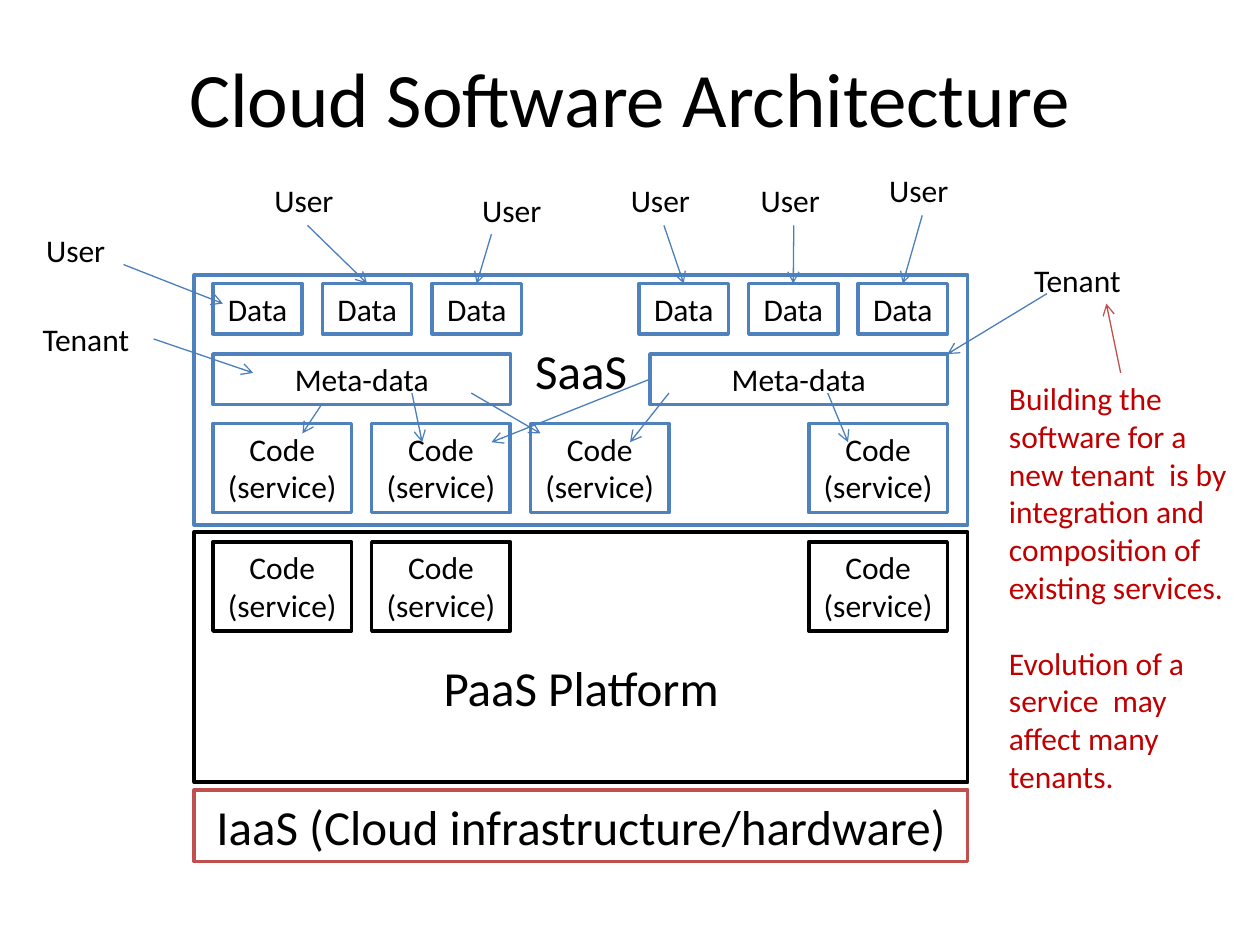
import pptx
import pptx.dml.color
import pptx.enum.shapes
import pptx.enum.text
import pptx.oxml
import pptx.oxml.ns
import pptx.util
from pptx.util import Pt

RGBColor = pptx.dml.color.RGBColor
BLACK = RGBColor(0x00, 0x00, 0x00)
WHITE = RGBColor(0xFF, 0xFF, 0xFF)
BLUE = RGBColor(0x4F, 0x81, 0xBD)
ARROW_BLUE = RGBColor(0x4B, 0x7E, 0xBC)
RED = RGBColor(0xC0, 0x50, 0x4D)
NOTE_RED = RGBColor(0xC0, 0x00, 0x00)

FONT = "Calibri"
TOP, LEFT, BOTTOM, RIGHT = range(4)  # connection sites of a rectangle
CENTER = pptx.enum.text.PP_ALIGN.CENTER

LAYER_X, LAYER_W, LAYER_H = 111, 442, 143
INNER_X, RIGHT_EDGE = 121.7, 541.4
CODE_W, CODE_H, CODE_STEP = 79.2, 51, 90.7
DATA_W, DATA_STEP = 51, 62.6
META_W = 170
ROW_H = 28.8
LABEL_W = 73.4


def write(frame, paragraphs, size, color=BLACK, align=CENTER):
    frame.word_wrap = True
    frame.text = "\n".join(paragraphs)
    for paragraph in frame.paragraphs:
        paragraph.alignment = align
        for run in paragraph.runs:
            run.font.name = FONT
            run.font.size = Pt(size)
            run.font.color.rgb = color


def add_box(slide, text, x, y, w, h, outline=BLUE, size=18, text_top=3.6):
    box = slide.shapes.add_shape(
        pptx.enum.shapes.MSO_SHAPE.RECTANGLE, Pt(x), Pt(y), Pt(w), Pt(h))
    box.shadow.inherit = False
    box.fill.solid()
    box.fill.fore_color.rgb = WHITE
    box.line.color.rgb = outline
    box.line.width = Pt(2)
    write(box.text_frame, [text], size)
    box.text_frame.vertical_anchor = pptx.enum.text.MSO_ANCHOR.TOP
    box.text_frame.margin_top = Pt(text_top)
    return box


def add_text(slide, paragraphs, x, y, w, h, size=18, color=BLACK, align=CENTER):
    text = slide.shapes.add_textbox(Pt(x), Pt(y), Pt(w), Pt(h))
    write(text.text_frame, paragraphs, size, color, align)
    return text


def add_label(slide, text, x, y):
    return add_text(slide, [text], x, y, LABEL_W, ROW_H)


def add_code(slide, x, y, outline=BLUE):
    return add_box(slide, "Code (service) ", x, y, CODE_W, CODE_H, outline)


def add_arrow(slide, start, end, color=ARROW_BLUE):
    """Each end is a point (x, y) or a joint (shape, site)."""
    joined = [not isinstance(place[0], (int, float)) for place in (start, end)]
    x1, y1 = (0, 0) if joined[0] else start
    x2, y2 = (0, 0) if joined[1] else end
    arrow = slide.shapes.add_connector(
        pptx.enum.shapes.MSO_CONNECTOR.STRAIGHT, Pt(x1), Pt(y1), Pt(x2), Pt(y2))
    if joined[0]:
        arrow.begin_connect(*start)
    if joined[1]:
        arrow.end_connect(*end)
    arrow.line.color.rgb = color
    arrow.line.width = Pt(0.75)
    qn = pptx.oxml.ns.qn
    tail = arrow.line._get_or_add_ln().makeelement(qn("a:tailEnd"), {"type": "arrow"})
    arrow.line._get_or_add_ln().append(tail)
    properties = arrow._element.spPr
    properties.append(properties.makeelement(qn("a:effectLst"), {}))


def add_layers(slide):
    add_box(slide, "PaaS Platform", LAYER_X, 304, LAYER_W, LAYER_H, BLACK, 28, 72)
    add_box(slide, "IaaS (Cloud infrastructure/hardware)",
            LAYER_X, 451.4, LAYER_W, 41, RED, 28)
    add_box(slide, "SaaS", LAYER_X, 157, LAYER_W, LAYER_H, BLUE, 28, 37.8)


def add_services(slide):
    last_x = RIGHT_EDGE - CODE_W
    for y, outline, count in ((242, BLUE, 3), (309.6, BLACK, 2)):
        for x in [INNER_X + i * CODE_STEP for i in range(count)] + [last_x]:
            add_code(slide, x, y, outline)


def add_data(slide):
    right_x = RIGHT_EDGE - DATA_W - 2 * DATA_STEP
    return [add_box(slide, "Data", x + i * DATA_STEP, 162, DATA_W, ROW_H)
            for x in (INNER_X, right_x) for i in range(3)]


def add_users(slide, data):
    places = [(8.6, 128.2), (139, 100), (257.8, 105.8),
              (342.7, 100), (416.9, 100), (490.3, 94.3)]
    users = [add_label(slide, "User ", x, y) for x, y in places]
    add_arrow(slide, (70.6, 151.2), (127.4, 173.5))
    add_arrow(slide, (280.8, 133.9), (data[2], TOP))
    for i in (1, 3, 4, 5):
        add_arrow(slide, (users[i], BOTTOM), (data[i], TOP))


def add_tenants(slide):
    left_tenant = add_label(slide, "Tenant ", 14.4, 179.3)
    add_label(slide, "Tenant ", 581, 145.4)
    add_arrow(slide, (left_tenant, RIGHT), (144.7, 213.1))
    add_arrow(slide, (598.3, 167.8), (RIGHT_EDGE, 202.3))


def add_metadata(slide):
    left_x, right_x = INNER_X, RIGHT_EDGE - META_W
    _, right_meta = [add_box(slide, "Meta-data", x, 202.3, META_W, ROW_H)
                     for x in (left_x, right_x)]
    # Links from the meta-data to the services
    for start, end in (
            ((184.3, 230.4), (172.8, 247.7)),
            ((235.4, 224.6), (241.2, 252.7)),
            ((269.3, 224.6), (308.9, 247.7)),
            ((382.3, 224.6), (360, 252.7)),
            ((473, 224.6), (484.6, 252.7)),
            ((right_meta, LEFT), (280.8, 252.7))):
        add_arrow(slide, start, end)


def add_note(slide):
    note = add_text(
        slide,
        ["Building the software for a new tenant  is by integration and "
         "composition of existing services.",
         "Evolution of a service  may affect many tenants."],
        569.5, 213.1, 141.8, 247, color=NOTE_RED,
        align=pptx.enum.text.PP_ALIGN.LEFT)
    note.text_frame.paragraphs[1].space_before = Pt(21.6)
    add_arrow(slide, (note, TOP), (632.2, 173.5), RED)


def main():
    deck = pptx.Presentation()
    deck.slide_width, deck.slide_height = Pt(720), Pt(540)
    slide = deck.slides.add_slide(deck.slide_layouts[6])

    # Title
    title = add_text(slide, ["Cloud Software Architecture"], 20, 21.6, 680, 67, 44)
    title.text_frame.vertical_anchor = pptx.enum.text.MSO_ANCHOR.MIDDLE

    # Layers and what they hold
    add_layers(slide)
    add_services(slide)
    data = add_data(slide)
    add_metadata(slide)

    # People around the layers
    add_users(slide, data)
    add_tenants(slide)
    add_note(slide)

    deck.save("out.pptx")


if __name__ == "__main__":
    main()
